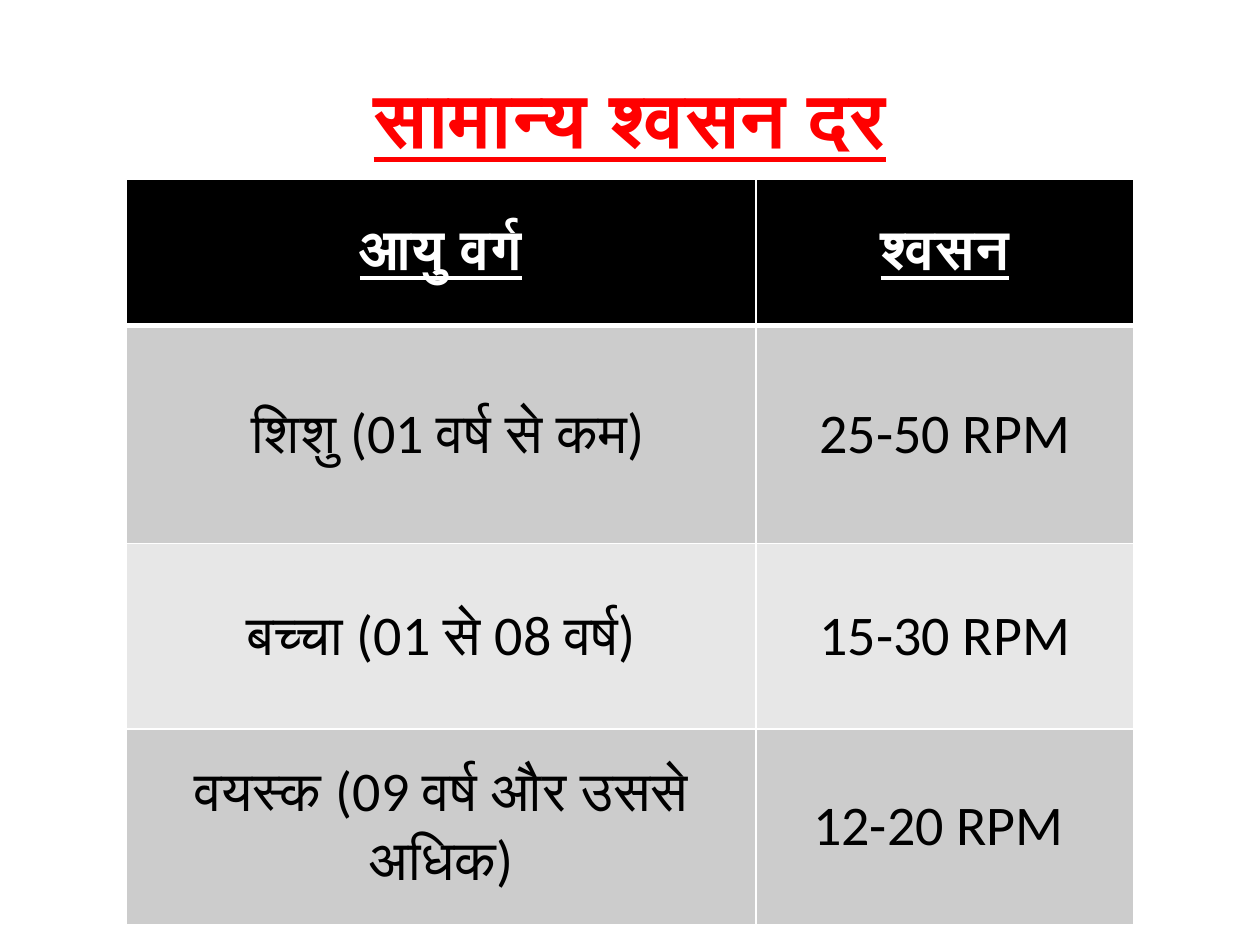
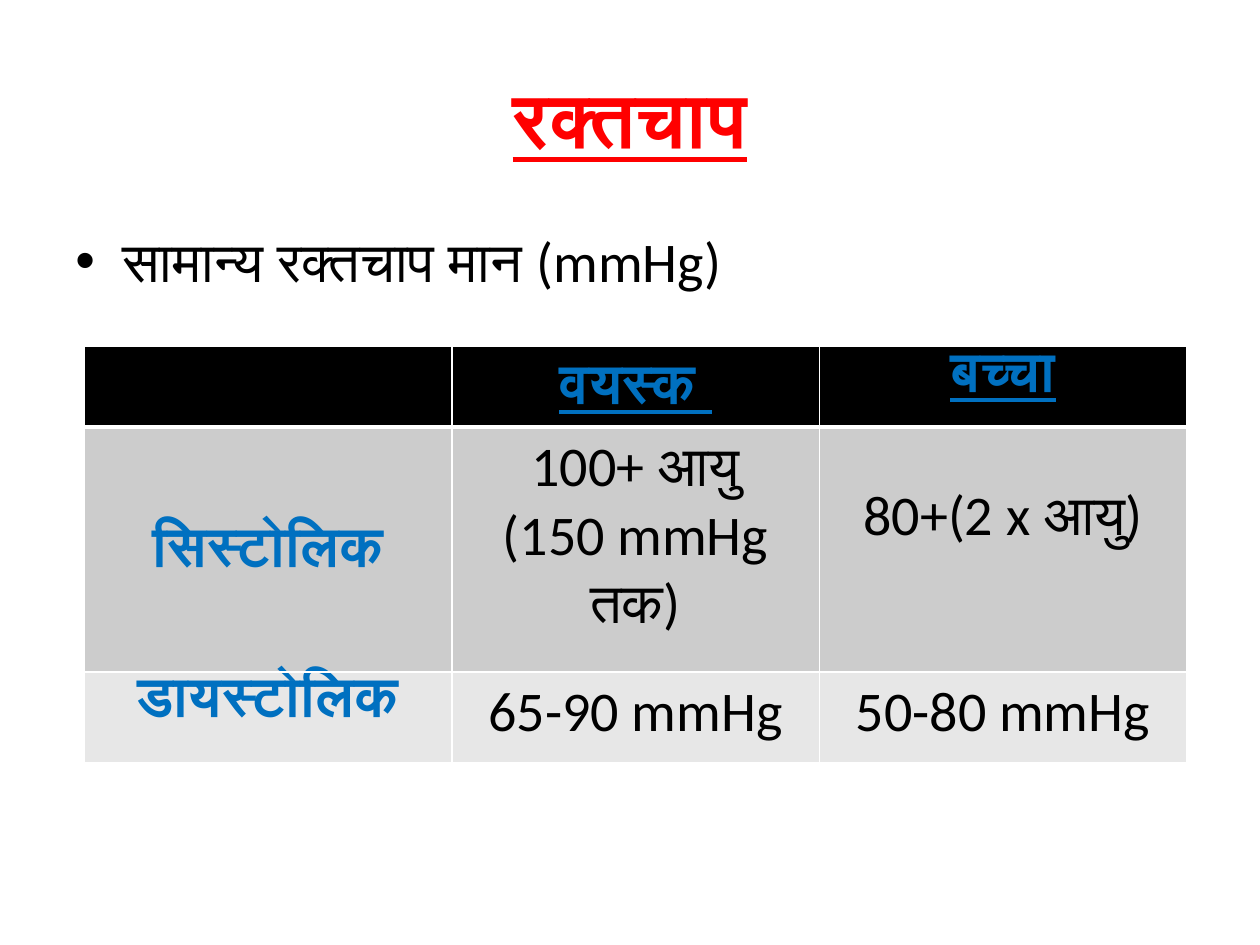
from dataclasses import dataclass, field

from lxml.etree import SubElement
from pptx import Presentation
from pptx.dml.color import RGBColor
from pptx.enum.text import MSO_ANCHOR, PP_ALIGN
from pptx.oxml.ns import qn
from pptx.util import Pt

COLORS = {
    "white": "FFFFFF",
    "black": "000000",
    "title": "FF0000",
    "label": "0070C0",
    "band_dark": "CCCCCC",
    "band_light": "E7E7E7",
}
FONT = "Calibri"

# Font formats: text colour key and font attributes
TITLE = {"color": "title", "size": Pt(44), "bold": True, "underline": True}
BODY = {"color": "black", "size": Pt(32), "bold": False}
HEAD = {"color": "white", "size": Pt(32), "bold": True, "underline": True}
LABEL_HEAD = HEAD | {"color": "label"}
LABEL = {"color": "label", "size": Pt(32), "bold": True}

# Cell layouts: anchor and margins
MIDDLE = {"vertical_anchor": MSO_ANCHOR.MIDDLE}
TOP = {"vertical_anchor": MSO_ANCHOR.TOP}
FLUSH_TOP = TOP | {"margin_top": Pt(0)}
RAISED = MIDDLE | {"margin_bottom": Pt(41)}


@dataclass
class Cell:
    text: str
    font: dict = field(default_factory=lambda: BODY)
    layout: dict = field(default_factory=lambda: MIDDLE)


@dataclass
class Grid:
    left: float
    top: float
    cols: list[float]
    rows: list[float]
    cells: list[list[Cell]]


def apply(target, values: dict) -> None:
    for name, value in values.items():
        setattr(target, name, value)


def style_font(font, fmt: dict) -> None:
    font.name = FONT
    font.color.rgb = RGBColor.from_string(COLORS[fmt["color"]])
    apply(font, {k: v for k, v in fmt.items() if k != "color"})


def write(tf, text: str, fmt: dict, align=PP_ALIGN.CENTER) -> None:
    """Write one paragraph for each line of text."""
    for i, line in enumerate(text.split("\n")):
        p = tf.paragraphs[0] if i == 0 else tf.add_paragraph()
        p.alignment = align
        r = p.add_run()
        r.text = line
        style_font(r.font, fmt)


def add_box(s, left: float, top: float, width: float, height: float, anchor):
    tf = s.shapes.add_textbox(Pt(left), Pt(top), Pt(width), Pt(height)).text_frame
    apply(tf, {"word_wrap": True, "vertical_anchor": anchor})
    return tf


def add_title(s, text: str) -> None:
    write(add_box(s, 36, 21.6, 648, 90, MSO_ANCHOR.MIDDLE), text, TITLE)


def add_bullet(s, text: str) -> None:
    tf = add_box(s, 36, 126, 648, 50, MSO_ANCHOR.TOP)
    pPr = tf.paragraphs[0]._p.get_or_add_pPr()
    pPr.set("marL", str(Pt(27)))
    pPr.set("indent", str(-Pt(27)))
    SubElement(pPr, qn("a:buFont"), typeface="Arial")
    SubElement(pPr, qn("a:buChar"), char="•")
    write(tf, text, BODY, PP_ALIGN.LEFT)


def add_borders(cell, top: float, bottom: float) -> None:
    tcPr = cell._tc.get_or_add_tcPr()
    for side, width in {"L": 1, "R": 1, "T": top, "B": bottom}.items():
        ln = SubElement(tcPr, qn(f"a:ln{side}"), w=str(Pt(width)))
        fill = SubElement(ln, qn("a:solidFill"))
        SubElement(fill, qn("a:srgbClr"), val=COLORS["white"])


def add_grid(s, grid: Grid) -> None:
    table = s.shapes.add_table(
        len(grid.rows), len(grid.cols), Pt(grid.left), Pt(grid.top),
        Pt(sum(grid.cols)), Pt(sum(grid.rows))).table
    for col, width in zip(table.columns, grid.cols):
        col.width = Pt(width)
    for i, (row, height) in enumerate(zip(table.rows, grid.rows)):
        row.height = Pt(height)
        # Black header, then alternating grey bands
        band = "black" if i == 0 else ("band_light", "band_dark")[i % 2]
        for cell, content in zip(row.cells, grid.cells[i]):
            add_borders(cell, top=3 if i == 1 else 1, bottom=3 if i == 0 else 1)
            cell.fill.solid()
            cell.fill.fore_color.rgb = RGBColor.from_string(COLORS[band])
            apply(cell, content.layout)
            if content.text:
                write(cell.text_frame, content.text, content.font)


RESPIRATION = Grid(72, 102.2, [360, 216], [84, 124.5, 105.8, 112], [
    [Cell("आयु वर्ग", HEAD), Cell("श्वसन", HEAD)],
    [Cell(" शिशु (01 वर्ष से कम)"), Cell("25-50 RPM")],
    [Cell("बच्चा (01 से 08 वर्ष)"), Cell("15-30 RPM")],
    [Cell("वयस्क (09 वर्ष और उससे अधिक)"), Cell("12-20 RPM ")],
])

BLOOD_PRESSURE = Grid(48.2, 198, [210] * 3, [46, 140, 52], [
    [Cell(""), Cell("वयस्क ", LABEL_HEAD), Cell("बच्चा", LABEL_HEAD, FLUSH_TOP)],
    [Cell("सिस्टोलिक", LABEL), Cell("100+ आयु\n(150 mmHg तक)", layout=TOP),
     Cell("80+(2 x आयु)", layout=RAISED)],
    [Cell("डायस्टोलिक", LABEL, FLUSH_TOP), Cell("65-90 mmHg", layout=TOP),
     Cell("50-80 mmHg", layout=TOP)],
])


def main() -> None:
    prs = Presentation()
    apply(prs, {"slide_width": Pt(720), "slide_height": Pt(540)})
    blank = prs.slide_layouts[6]

    # Normal respiration rates
    s = prs.slides.add_slide(blank)
    add_title(s, "सामान्य श्वसन दर")
    add_grid(s, RESPIRATION)

    # Normal blood pressure
    s = prs.slides.add_slide(blank)
    add_title(s, "रक्तचाप")
    add_bullet(s, "सामान्य रक्तचाप मान (mmHg)")
    add_grid(s, BLOOD_PRESSURE)

    prs.save("out.pptx")


if __name__ == "__main__":
    main()
